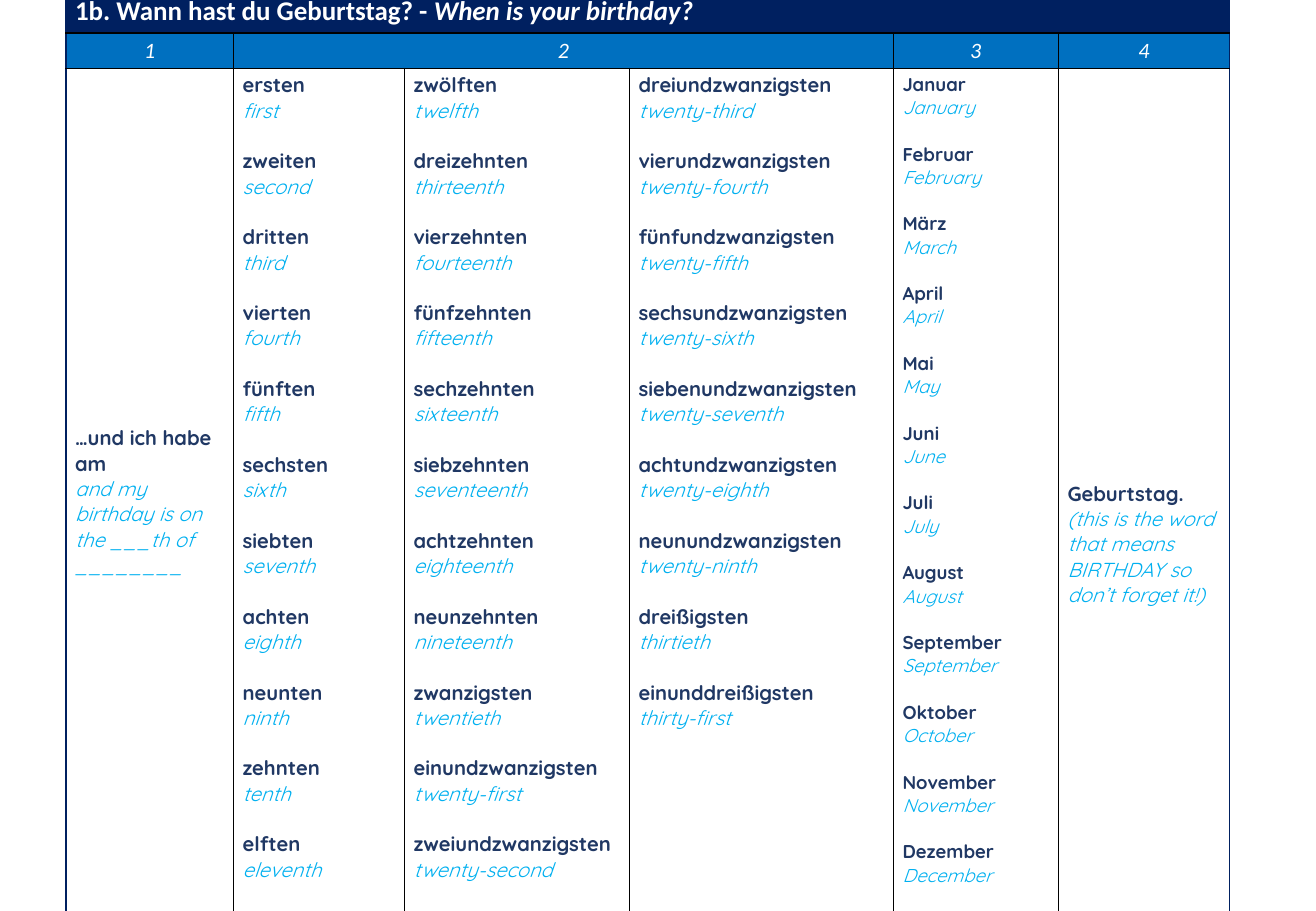
from dataclasses import dataclass, replace
from typing import NamedTuple

from lxml import etree
from pptx import Presentation
from pptx.dml.color import RGBColor
from pptx.enum.text import MSO_ANCHOR, PP_ALIGN
from pptx.oxml.ns import qn
from pptx.table import Table, _Cell
from pptx.text.text import TextFrame, _Paragraph
from pptx.util import Pt

TOP = MSO_ANCHOR.TOP
MIDDLE = MSO_ANCHOR.MIDDLE
LEFT = PP_ALIGN.LEFT
CENTER = PP_ALIGN.CENTER

BLANK_LAYOUT = 6
SLIDE_SIZE = (779.76, 540)
TABLE_LEFT, TABLE_TOP = 39, -6.5
COLUMN_WIDTHS = (99.3, 101.3, 133.3, 156.4, 97.8, 101.6)
ROW_HEIGHTS = (26, 21, 564)
LAST_COLUMN = len(COLUMN_WIDTHS) - 1
SIDE_MARGIN, EDGE_MARGIN = 5.5, 2.6
LINE_FACTOR = 1.25


@dataclass(frozen=True)
class TextStyle:
    font: str
    size: float
    color: str
    bold: bool = False
    italic: bool = False


@dataclass(frozen=True)
class Theme:
    navy: str = "002060"
    blue: str = "0070C0"
    black: str = "000000"
    title: TextStyle = TextStyle("Calibri", 16, "FFFFFF", bold=True)
    number: TextStyle = TextStyle("Calibri", 13, "FFFFFF", italic=True)
    german: TextStyle = TextStyle("Quicksand", 12, "203864", bold=True)
    english: TextStyle = TextStyle("Quicksand", 12, "00B0F0", italic=True)
    month_size: float = 11
    border_width: float = 1


THEME = Theme()


class Phrase(NamedTuple):
    german: str
    english: str


class Heading(NamedTuple):
    text: str
    column: int
    last_column: int


@dataclass(frozen=True)
class VocabularyColumn:
    phrases: tuple[Phrase, ...]
    size: float = THEME.german.size
    anchor: MSO_ANCHOR = TOP
    bottom_margin: float = EDGE_MARGIN


HEADINGS = (Heading("1", 0, 0), Heading("2", 1, 3), Heading("3", 4, 4), Heading("4", 5, 5))

VOCABULARY = (
    VocabularyColumn(
        (Phrase("…und ich habe am", "and my birthday is on the ___th of ________"),),
        anchor=MIDDLE,
        bottom_margin=53,
    ),
    VocabularyColumn((
        Phrase("ersten", "first"),
        Phrase("zweiten", "second"),
        Phrase("dritten", "third"),
        Phrase("vierten", "fourth"),
        Phrase("fünften", "fifth"),
        Phrase("sechsten", "sixth"),
        Phrase("siebten", "seventh"),
        Phrase("achten", "eighth"),
        Phrase("neunten", "ninth"),
        Phrase("zehnten", "tenth"),
        Phrase("elften", "eleventh"),
    )),
    VocabularyColumn((
        Phrase("zwölften", "twelfth"),
        Phrase("dreizehnten", "thirteenth"),
        Phrase("vierzehnten", "fourteenth"),
        Phrase("fünfzehnten", "fifteenth"),
        Phrase("sechzehnten", "sixteenth"),
        Phrase("siebzehnten", "seventeenth"),
        Phrase("achtzehnten", "eighteenth"),
        Phrase("neunzehnten", "nineteenth"),
        Phrase("zwanzigsten", "twentieth"),
        Phrase("einundzwanzigsten", "twenty-first"),
        Phrase("zweiundzwanzigsten", "twenty-second"),
    )),
    VocabularyColumn((
        Phrase("dreiundzwanzigsten", "twenty-third"),
        Phrase("vierundzwanzigsten", "twenty-fourth"),
        Phrase("fünfundzwanzigsten", "twenty-fifth"),
        Phrase("sechsundzwanzigsten", "twenty-sixth"),
        Phrase("siebenundzwanzigsten", "twenty-seventh"),
        Phrase("achtundzwanzigsten", "twenty-eighth"),
        Phrase("neunundzwanzigsten", "twenty-ninth"),
        Phrase("dreißigsten", "thirtieth"),
        Phrase("einunddreißigsten", "thirty-first"),
    )),
    VocabularyColumn((
        Phrase("Januar", "January"),
        Phrase("Februar", "February"),
        Phrase("März", "March"),
        Phrase("April", "April"),
        Phrase("Mai", "May"),
        Phrase("Juni", "June"),
        Phrase("Juli", "July"),
        Phrase("August", "August"),
        Phrase("September", "September"),
        Phrase("Oktober", "October"),
        Phrase("November", "November"),
        Phrase("Dezember", "December"),
    ), size=THEME.month_size),
    VocabularyColumn(
        (Phrase("Geburtstag.", "(this is the word that means BIRTHDAY so don’t forget it!)"),),
        anchor=MIDDLE,
    ),
)


def style_paragraph(paragraph: _Paragraph, style: TextStyle, alignment: PP_ALIGN = LEFT) -> None:
    paragraph.alignment = alignment
    font = paragraph.font
    font.name, font.size = style.font, Pt(style.size)
    font.bold, font.italic = style.bold, style.italic
    font.color.rgb = RGBColor.from_string(style.color)


def set_borders(cell: _Cell, row: int, column: int, last_column: int) -> None:
    """Draw navy lines on the outer sides and top of the table, black ones inside."""
    edges = {
        "L": column == 0,
        "R": last_column == LAST_COLUMN,
        "T": row == 0,
        "B": False,
    }
    properties = cell._tc.get_or_add_tcPr()
    for position, (side, is_outer) in enumerate(edges.items()):
        line = etree.Element(qn(f"a:ln{side}"), w=str(Pt(THEME.border_width)))
        fill = etree.SubElement(line, qn("a:solidFill"))
        etree.SubElement(fill, qn("a:srgbClr"), val=THEME.navy if is_outer else THEME.black)
        properties.insert(position, line)


def prepare_cell(table: Table, row: int, column: int, last_column: int,
                 fill: str | None = None, anchor: MSO_ANCHOR = TOP) -> _Cell:
    cell = table.cell(row, column)
    if last_column > column:
        cell.merge(table.cell(row, last_column))
    cell.margin_left = cell.margin_right = Pt(SIDE_MARGIN)
    cell.margin_top = cell.margin_bottom = Pt(EDGE_MARGIN)
    cell.vertical_anchor = anchor
    if fill:
        cell.fill.solid()
        cell.fill.fore_color.rgb = RGBColor.from_string(fill)
    else:
        cell.fill.background()
    set_borders(cell, row, column, last_column)
    return cell


def write_phrases(text_frame: TextFrame, content: VocabularyColumn) -> None:
    for index, phrase in enumerate(content.phrases):
        german = text_frame.add_paragraph() if index else text_frame.paragraphs[0]
        english = text_frame.add_paragraph()
        german.text, english.text = phrase
        style_paragraph(german, replace(THEME.german, size=content.size))
        style_paragraph(english, replace(THEME.english, size=content.size))
        english.space_after = Pt(content.size * LINE_FACTOR)


def fill_table(table: Table) -> None:
    title = prepare_cell(table, 0, 0, LAST_COLUMN, THEME.navy, MIDDLE).text_frame.paragraphs[0]
    title.add_run().text = "1b. Wann hast du Geburtstag? - "
    translation = title.add_run()
    translation.text = "When is your birthday?"
    style_paragraph(title, THEME.title)
    translation.font.italic = True

    for heading in HEADINGS:
        cell = prepare_cell(table, 1, heading.column, heading.last_column, THEME.blue)
        cell.text = heading.text
        style_paragraph(cell.text_frame.paragraphs[0], THEME.number, CENTER)

    for column, content in enumerate(VOCABULARY):
        cell = prepare_cell(table, 2, column, column, anchor=content.anchor)
        cell.margin_bottom = Pt(content.bottom_margin)
        write_phrases(cell.text_frame, content)


def main() -> None:
    presentation = Presentation()
    presentation.slide_width, presentation.slide_height = map(Pt, SLIDE_SIZE)
    slide = presentation.slides.add_slide(presentation.slide_layouts[BLANK_LAYOUT])
    table = slide.shapes.add_table(
        len(ROW_HEIGHTS), len(COLUMN_WIDTHS), Pt(TABLE_LEFT), Pt(TABLE_TOP),
        Pt(sum(COLUMN_WIDTHS)), Pt(sum(ROW_HEIGHTS))).table
    table.first_row = table.horz_banding = False
    for column, width in zip(table.columns, COLUMN_WIDTHS):
        column.width = Pt(width)
    for row, height in zip(table.rows, ROW_HEIGHTS):
        row.height = Pt(height)
    fill_table(table)
    presentation.save("out.pptx")


if __name__ == "__main__":
    main()
